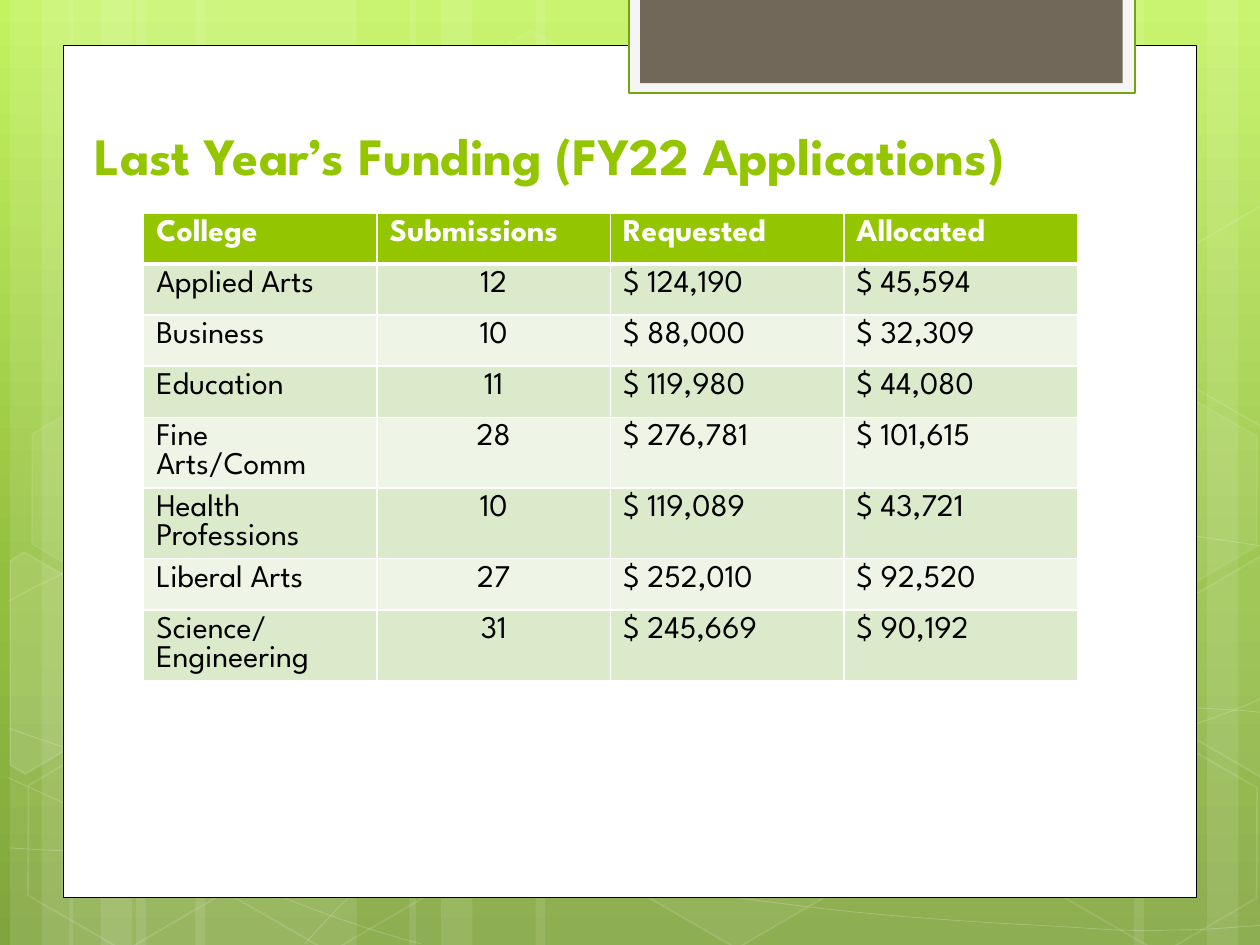
from copy import deepcopy
from math import cos, radians, sin
from lxml import etree
from pptx import Presentation
from pptx.dml.color import RGBColor
from pptx.enum import shapes, text
from pptx.oxml.ns import qn
from pptx.util import Inches, Pt

FONT = "League Spartan"
COLORS = {"white": "FFFFFF", "black": "000000", "green": "94C600", "tab_line": "74A510",
          "tab_back": "F5F5F5", "tab": "71685A", "band_dark": "DCEACC", "band_light": "EEF5E7"}
BACKGROUND = [(0, "C3F35F"), (0.62, "93BF3F"), (1, "81A53E")]

TITLE = "Last Year’s Funding (FY22 Applications)"
ROWS = [
    ("College", "Submissions", "Requested", "Allocated"),
    ("Applied Arts", "12", "$ 124,190", "$ 45,594"),
    ("Business", "10", "$ 88,000", "$ 32,309"),
    ("Education", "11", "$ 119,980", "$ 44,080"),
    ("Fine Arts/Comm", "28", "$ 276,781", "$ 101,615"),
    ("Health Professions", "10", "$ 119,089", "$ 43,721"),
    ("Liberal Arts", "27", "$ 252,010", "$ 92,520"),
    ("Science/\nEngineering", "31", "$ 245,669", "$ 90,192"),
]

# left, width of the full-height light strips
STRIPS = [(1.08, 1.75), (0.08, 0.5), (0.33, 0.83), (1.55, 1.75), (0.55, 0.5), (0.8, 0.83),
          (7.33, 1.75), (9.58, 0.5), (9, 0.83), (4.25, 3.08), (3.25, 0.5), (3.5, 0.83)]
# start point, then two control points and an end point for each piece
WAVES = [
    [(0.07, 6.73), (0.61, 6.76), (1.15, 6.79), (1.9, 6.78), (2.65, 6.77), (3.58, 6.75),
     (4.58, 6.65), (5.58, 6.55), (7, 6.36), (7.92, 6.17), (8.83, 5.98), (9.77, 5.68), (10.07, 5.51)],
    [(0.07, 4.77), (0.36, 4.61), (0.65, 4.46), (1.21, 4.31), (1.78, 4.16), (2.59, 3.94),
     (3.47, 3.87), (4.36, 3.8), (5.44, 3.79), (6.54, 3.87), (7.64, 3.95), (9.47, 4.26), (10.07, 4.34)],
    [(0.06, 6.17), (1.27, 6.72), (2.47, 7.27), (3.34, 7.49)],
    [(0.07, 5.78), (0.38, 5.89), (0.7, 6), (1.28, 6.16), (1.86, 6.31), (2.73, 6.56),
     (3.57, 6.73), (4.4, 6.9), (5.45, 7.08), (6.28, 7.18), (7.11, 7.29), (8, 7.33),
     (8.53, 7.36), (9.05, 7.4), (9.19, 7.38), (9.45, 7.38), (9.71, 7.37), (9.89, 7.35), (10.07, 7.34)],
    [(2.42, 7.49), (2.6, 7.29), (2.78, 7.09), (3.02, 6.91), (3.26, 6.73), (3.6, 6.53),
     (3.88, 6.39), (4.16, 6.25), (4.33, 6.19), (4.7, 6.09), (5.06, 5.99), (5.73, 5.85),
     (6.08, 5.78), (6.44, 5.71), (6.49, 5.71), (6.8, 5.69), (7.11, 5.66), (7.6, 5.63),
     (7.94, 5.62), (8.29, 5.61), (8.86, 5.62), (8.86, 5.62), (9.08, 5.62), (9.31, 5.62),
     (9.53, 5.62), (9.71, 5.63), (9.88, 5.64), (9.97, 5.65), (10.06, 5.66), (10.03, 5.65), (10.06, 5.66)],
]
TILT = 30
# left, top, fill opacity, line opacity
HEXAGONS = [(3.34, 0.36, 4, 8), (4.97, 5.89, 6, 12), (0.11, 5.91, 0, 12), (0.14, 3.12, 7, 8),
            (1.74, 5.92, 0, 12), (7.53, 4.53, 10, 12), (8.34, 5.93, 0, 12), (8.34, 3.14, 7, 8)]
# centre, corner points as seen after the tilt, fill opacity
CUT_HEXAGONS = [
    ((0.36, 5.35), [(0.08, 4.45), (0.19, 4.38), (0.96, 4.82), (0.95, 5.7), (0.2, 6.14), (0.08, 6.07)], 10),
    ((9.85, 5.2), [(9.26, 4.85), (10.01, 4.41), (10.09, 4.46), (10.09, 6.13), (10.02, 6.17), (9.26, 5.73)], 4),
    ((9.85, 2.41), [(9.26, 2.07), (10.01, 1.63), (10.1, 1.68), (10.09, 3.35), (10.02, 3.39), (9.26, 2.95)], 0),
]
# left, top, width, height, fill, line, line width
PANELS = [(0.5, 0.36, 9, 6.76, "white", "black", 0.5),
          (4.99, -0.02, 4.02, 0.76, "tab_back", "tab_line", 1.25),
          (5.08, -0.02, 3.83, 0.68, "tab", None, 0)]


def paint(fill, color, opacity=100):
    """Solid fill with opacity in percent; 0 leaves it empty."""
    if not opacity:
        fill.background()
        return
    fill.solid()
    fill.fore_color.rgb = RGBColor.from_string(COLORS[color])
    if opacity < 100:
        clr = fill._xPr.find(qn("a:solidFill"))[0]
        etree.SubElement(clr, qn("a:alpha"), val=str(opacity * 1000))


def style(sp, fill, line, width, fill_opacity=100, line_opacity=100):
    sp.shadow.inherit = False
    paint(sp.fill, fill, fill_opacity)
    paint(sp.line.fill, line, line_opacity)
    if line_opacity:
        sp.line.width = Pt(width)


def add_outline(s, points, close):
    pts = [(Inches(x), Inches(y)) for x, y in points]
    builder = s.shapes.build_freeform(*pts[0])
    builder.add_line_segments(pts[1:], close=close)
    return builder.convert_to_shape()


def add_wave(s, points):
    """Open outline whose points after the first form cubic Bezier pieces."""
    sp = add_outline(s, points, False)
    outline = sp._element.find(".//" + qn("a:path"))
    lines = outline.findall(qn("a:lnTo"))
    for i in range(0, len(lines), 3):
        curve = etree.SubElement(outline, qn("a:cubicBezTo"))
        for line in lines[i:i + 3]:
            curve.append(line[0])
            outline.remove(line)
    return sp


def untilt(point, centre):
    dx, dy = point[0] - centre[0], point[1] - centre[1]
    c, n = cos(radians(TILT)), sin(radians(TILT))
    return centre[0] + c * dx + n * dy, centre[1] - n * dx + c * dy


def add_background(s):
    fill = s.background.fill
    fill.gradient()
    fill.gradient_angle = 270
    stop_list = s._element.find(".//" + qn("a:gsLst"))
    stop_list.append(deepcopy(stop_list[-1]))
    for stop, (position, color) in zip(fill.gradient_stops, BACKGROUND):
        stop.position = position
        stop.color.rgb = RGBColor.from_string(color)


def add_decoration(s):
    for left, width in STRIPS:
        sp = s.shapes.add_shape(shapes.MSO_SHAPE.RECTANGLE, Inches(left), 0, Inches(width), Inches(7.5))
        style(sp, "white", "white", 0, 10, 0)
    for wave in WAVES:
        style(add_wave(s, wave), "white", "white", 0.5, 0, 20)
    for left, top, fill_opacity, line_opacity in HEXAGONS:
        sp = s.shapes.add_shape(shapes.MSO_SHAPE.HEXAGON, Inches(left), Inches(top), Inches(1.75), Inches(1.52))
        sp.adjustments[0] = 0.285
        sp.rotation = TILT
        style(sp, "white", "white", 1, fill_opacity, line_opacity)
    for centre, corners, opacity in CUT_HEXAGONS:
        sp = add_outline(s, [untilt(corner, centre) for corner in corners], True)
        sp.rotation = TILT
        style(sp, "white", "white", 1, opacity, 12)
    for *box, fill, line, width in PANELS:
        sp = s.shapes.add_shape(shapes.MSO_SHAPE.RECTANGLE, *map(Inches, box))
        style(sp, fill, line, width, 100, 100 if line else 0)


def format_text(p, size, color, bold, align=text.PP_ALIGN.LEFT):
    p.alignment = align
    for r in p.runs:
        r.font.name, r.font.size, r.font.bold = FONT, Pt(size), bold
        r.font.color.rgb = RGBColor.from_string(COLORS[color])


def add_title(s):
    title = s.shapes.title
    s.shapes._spTree.append(title._element)  # in front of the panels
    title.left, title.top, title.width, title.height = map(Inches, (0.65, 0.68, 8.16, 0.85))
    tf = title.text_frame
    tf.text = TITLE
    tf.vertical_anchor = text.MSO_ANCHOR.BOTTOM
    tf.auto_size = text.MSO_AUTO_SIZE.NONE
    format_text(tf.paragraphs[0], 30, "green", True)


def add_borders(cell, header, below_header):
    tcPr = cell._tc.get_or_add_tcPr()
    for side in "LRTB":
        thick = (header and side == "B") or (below_header and side == "T")
        ln = etree.SubElement(tcPr, qn("a:ln" + side), w=str(Pt(3 if thick else 1)))
        fill = etree.SubElement(ln, qn("a:solidFill"))
        etree.SubElement(fill, qn("a:srgbClr"), val=COLORS["white"])


def add_funding_table(s):
    frame = s.shapes.add_table(len(ROWS), len(ROWS[0]), *map(Inches, (1.14, 1.69, 7.41, 4.13)))
    table = frame.table
    for i, row in enumerate(ROWS):
        table.rows[i].height = Pt(29.2)
        header = i == 0
        band = "green" if header else "band_dark" if i % 2 else "band_light"
        for j, value in enumerate(row):
            cell = table.cell(i, j)
            add_borders(cell, header, i == 1)
            paint(cell.fill, band)
            cell.text_frame.text = value
            centred = j == 1 and not header
            for p in cell.text_frame.paragraphs:
                format_text(p, 18, "white" if header else "black", header,
                            text.PP_ALIGN.CENTER if centred else text.PP_ALIGN.LEFT)
    frame.height = Inches(4.13)


def main():
    prs = Presentation()
    prs.slide_width, prs.slide_height = Inches(10), Inches(7.5)
    s = prs.slides.add_slide(prs.slide_layouts[5])
    add_background(s)
    add_decoration(s)
    add_title(s)
    add_funding_table(s)
    prs.save("out.pptx")


if __name__ == "__main__":
    main()
